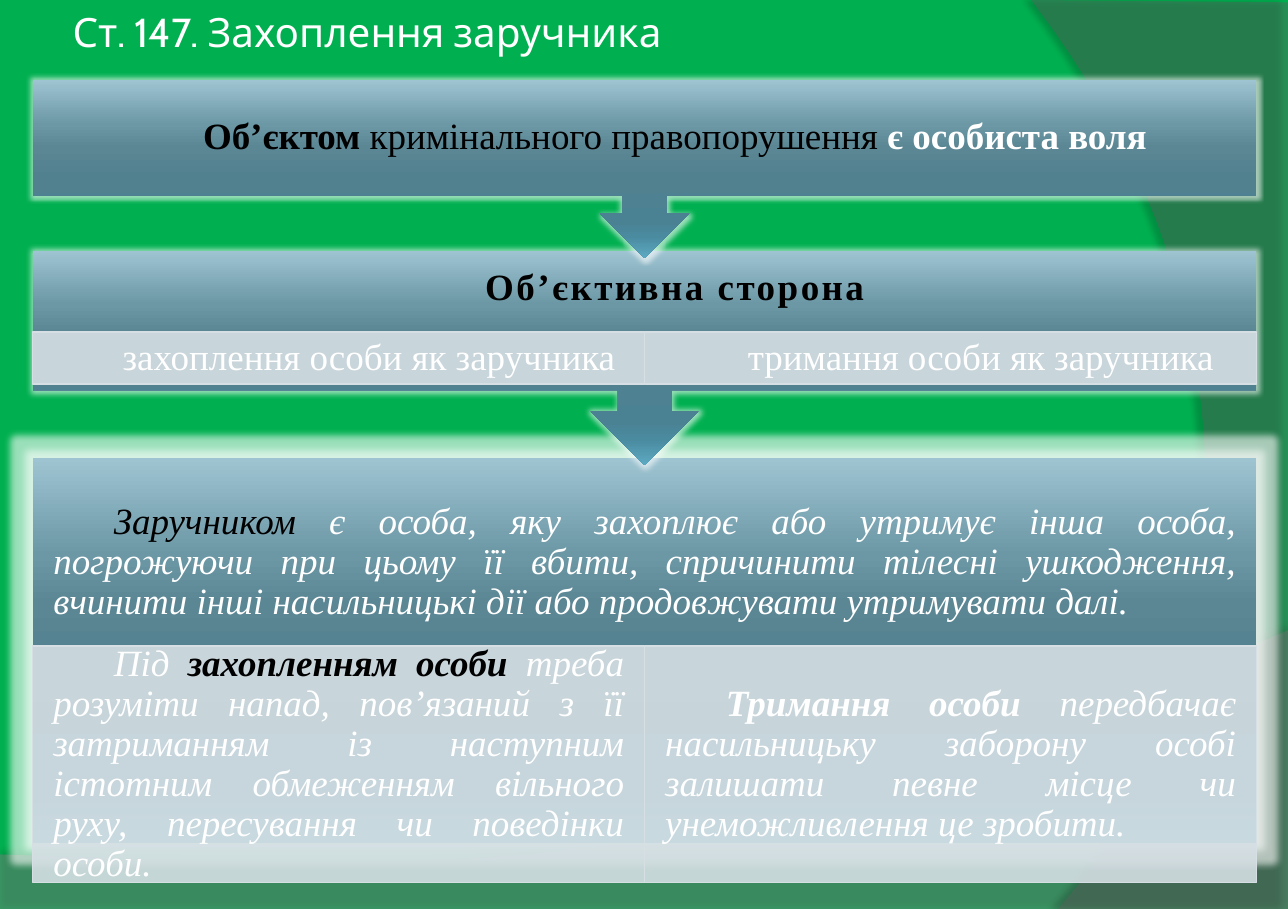
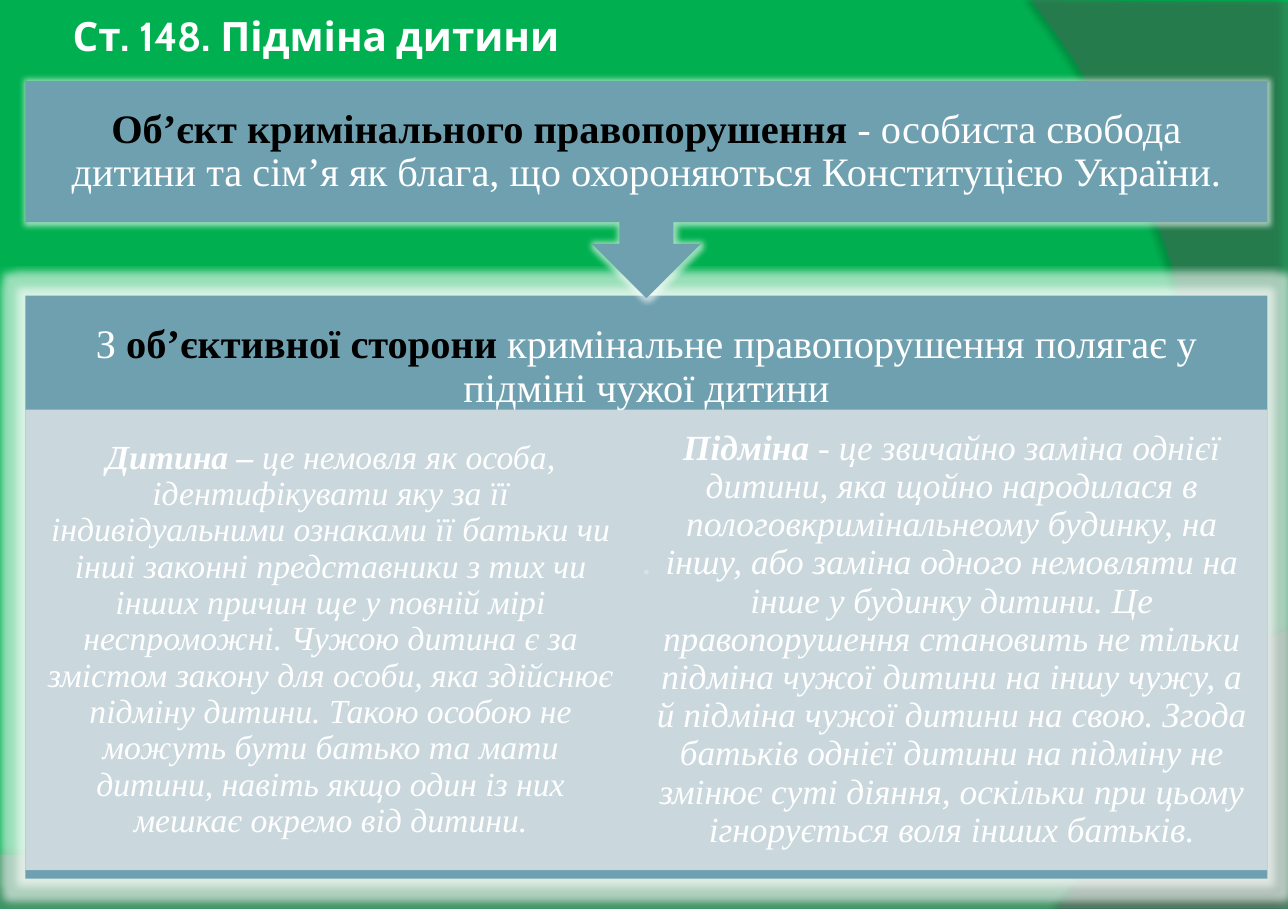
"""Builds two slides on articles 147 and 148: hostage taking and child substitution."""
from dataclasses import dataclass

from lxml import etree
from pptx import Presentation
from pptx.dml.color import RGBColor
from pptx.enum import shapes, text
from pptx.oxml import ns
from pptx.util import Inches, Pt


@dataclass(frozen=True)
class Theme:
    back: str = "00B050"
    white: str = "FFFFFF"
    black: str = "000000"
    cell: str = "D5DFE4"
    steel: str = "6EA0B0"
    hill: str = "7F7F7F"
    side: str = "5E5E5E"
    metal: tuple = ((0, "9EC4D2"), (25, "6C97A5"), (38, "5B8694"), (55, "51808F"),
                    (80, "4A8294"), (88, "4A8BA0"), (100, "5DAAC2"))
    title_font: str = "Cabin"
    body_font: str = "Times New Roman"
    large: int = 24
    body: int = 22
    note: int = 21
    small: int = 20


T = Theme()
ALIGN = text.PP_ALIGN
SHAPE = shapes.MSO_SHAPE


def paint(sp, color, alpha=100, effect=None, line=None, **attrs):
    """Fill a shape with one colour or with gradient stops and add one effect."""
    sp.shadow.inherit = False
    if isinstance(color, str):
        sp.fill.solid()
        sp.fill.fore_color.rgb = RGBColor.from_string(color)
        clr = sp._element.spPr.find(".//" + ns.qn("a:srgbClr"))
        etree.SubElement(clr, ns.qn("a:alpha"), val=str(alpha * 1000))
    else:
        sp.fill.gradient()
        sp.fill.gradient_angle = 270
        stops = sp._element.spPr.find(".//" + ns.qn("a:gsLst"))
        for gs in list(stops):
            stops.remove(gs)
        for pos, value in color:
            gs = etree.SubElement(stops, ns.qn("a:gs"), pos=str(pos * 1000))
            etree.SubElement(gs, ns.qn("a:srgbClr"), val=value)
    if line:
        sp.line.color.rgb = RGBColor.from_string(line)
        sp.line.width = Pt(0.75)
    else:
        sp.line.fill.background()
    if effect:
        name, value, opacity = effect
        effects = sp._element.spPr.find(ns.qn("a:effectLst"))
        node = etree.SubElement(effects, ns.qn(name), {k: str(v) for k, v in attrs.items()})
        clr = etree.SubElement(node, ns.qn("a:srgbClr"), val=value)
        etree.SubElement(clr, ns.qn("a:alpha"), val=str(opacity * 1000))


def write(tf, *paras, size=T.body, font=T.body_font, align=ALIGN.CENTER, italic=False,
          indent=0, line=0.9, after=0, gap=0, spacing=0, insets=(0.05, 0.05, 0.05, 0.05)):
    """Write paragraphs of (text, style) runs, where b is bold and k is black."""
    tf.word_wrap = True
    tf.auto_size = text.MSO_AUTO_SIZE.NONE
    tf.vertical_anchor = text.MSO_ANCHOR.MIDDLE
    tf.margin_left, tf.margin_top, tf.margin_right, tf.margin_bottom = map(Inches, insets)
    for i, runs in enumerate(paras):
        p = tf.add_paragraph() if i else tf.paragraphs[0]
        p.alignment = align
        p.line_spacing = line
        p.space_before = Pt(gap if i else 0)
        p.space_after = Pt(after)
        p._p.get_or_add_pPr().set("indent", str(Inches(indent)))
        for words, style in runs:
            r = p.add_run()
            r.text = words
            r.font.name = font
            r.font.size = Pt(size)
            r.font.bold = "b" in style
            r.font.italic = italic
            r.font.color.rgb = RGBColor.from_string(T.black if "k" in style else T.white)
            if spacing:
                r._r.get_or_add_rPr().set("spc", str(int(spacing * 100)))


CALLOUT, RECT = SHAPE.DOWN_ARROW_CALLOUT, SHAPE.RECTANGLE
PAGES = [
    dict(
        title=("Ст. 147. Захоплення заручника", ""), title_height=0.51,
        left=0.27, split=5.32, right=10.37, fill=T.metal, cell_line=T.cell,
        format=dict(indent=0.5, after=6),
        bands=[
            dict(kind=CALLOUT, top=0.66, height=1.47, glow=0.06, pad=(0.17, 0.17),
                 head=[[("Об’єктом ", "bk"), ("кримінального правопорушення ", "k"),
                        ("є особиста воля", "b")]]),
            dict(kind=CALLOUT, top=2.07, height=1.77, glow=0.06, pad=(0.1, 0.63),
                 head=[[("Об’єктивна сторона", "bk")]], head_format=dict(spacing=1.5),
                 cell_top=2.74, cell_height=0.43,
                 cells=[([("захоплення особи як заручника", "")], {}),
                        ([("тримання особи як заручника", "")], {})]),
            dict(kind=RECT, top=3.78, height=3.18, glow=0.12, pad=(0.17, 1.63),
                 head=[[("Заручником", "k"),
                        (" є особа, яку захоплює або утримує інша особа, погрожуючи при цьому "
                         "її вбити, спричинити тілесні ушкодження, вчинити інші насильницькі "
                         "дії або продовжувати утримувати далі.", "")]],
                 head_format=dict(align=ALIGN.JUSTIFY, italic=True),
                 cell_top=5.33, cell_height=1.95,
                 cell_format=dict(align=ALIGN.JUSTIFY, italic=True),
                 cells=[([("Під ", ""), ("захопленням особи", "bk"),
                          (" треба розуміти напад, пов’язаний з її затриманням із наступним "
                           "істотним обмеженням вільного руху, пересування чи поведінки "
                           "особи.", "")], {}),
                        ([("Тримання особи ", "b"),
                          ("передбачає насильницьку заборону особі залишати певне місце чи "
                           "унеможливлення це зробити.", "")], {})]),
        ]),
    dict(
        title=("Ст. 148. Підміна дитини", "b"), title_height=0.58,
        left=0.21, split=5.25, right=10.46, fill=T.steel, cell_line=None,
        format=dict(after=8),
        bands=[
            dict(kind=CALLOUT, top=0.67, height=1.79, glow=0.06, pad=(0.19, 0.19),
                 head=[[("Об’єкт кримінального правопорушення ", "bk"),
                        ("- особиста свобода дитини та сім’я як блага, що охороняються "
                         "Конституцією України.", "")]],
                 head_format=dict(size=T.large)),
            dict(kind=RECT, top=2.44, height=4.81, glow=0.12, pad=(0.19, 2.4),
                 head=[[("З ", ""), ("об’єктивної сторони ", "bk"),
                        ("кримінальне правопорушення полягає у підміні чужої дитини", "")],
                       [(".", "")]],
                 head_format=dict(size=T.large, gap=68),
                 cell_top=3.38, cell_height=3.8, cell_format=dict(italic=True),
                 cells=[([("Дитина – ", "b"),
                          ("це немовля як особа, ідентифікувати яку за її індивідуальними "
                           "ознаками її батьки чи інші законні представники з тих чи інших "
                           "причин ще у повній мірі неспроможні. Чужою дитина є за змістом "
                           "закону для особи, яка здійснює підміну дитини. Такою особою не "
                           "можуть бути батько та мати дитини, навіть якщо один із них мешкає "
                           "окремо від дитини.", "")], dict(size=T.small)),
                        ([("Підміна", "b"),
                          (" - це звичайно заміна однієї дитини, яка щойно народилася в "
                           "пологовкримінальнеому будинку, на іншу, або заміна одного немовляти "
                           "на інше у будинку дитини. Це правопорушення становить не тільки "
                           "підміна чужої дитини на іншу чужу, а й підміна чужої дитини на свою. "
                           "Згода батьків однієї дитини на підміну не змінює суті діяння, "
                           "оскільки при цьому ігнорується воля інших батьків.", "")],
                         dict(size=T.note))]),
        ]),
]
WAVES = [
    (T.hill, 45, 35, 3.5, 270, [(0, 7.05), (0, 7.51), (10.63, 7.51)],
     [(10.63, 5.2), (5.94, 7.29), (4.15, 7.19), (0, 7.05)]),
    (T.side, 40, 45, 4, 180, [(10.63, 0.02), (10.63, 7.5)],
     [(8.73, 7.5), (9.94, 6.19), (10.82, 3), (8.51, 0)]),
]

prs = Presentation()
prs.slide_width, prs.slide_height = Inches(10.63), Inches(7.5)
layout = prs.slide_layouts[5]
bg = prs.slide_master.background.fill
bg.solid()
bg.fore_color.rgb = RGBColor.from_string(T.back)

for n, page in enumerate(PAGES):
    s = prs.slides.add_slide(layout)
    if n == 0:
        for i, (color, alpha, dark, dist, angle, corners, curve) in enumerate(WAVES):
            points = list(corners)
            for step in range(41):
                t = step / 40
                weights = ((1 - t) ** 3, 3 * t * (1 - t) ** 2, 3 * t * t * (1 - t), t ** 3)
                points.append(tuple(sum(w * c[axis] for w, c in zip(weights, curve))
                                    for axis in (0, 1)))
            fb = s.shapes.build_freeform(*map(Inches, points[0]), scale=1.0)
            fb.add_line_segments([tuple(map(Inches, pt)) for pt in points[1:]], close=True)
            wave = fb.convert_to_shape()
            paint(wave, color, alpha, ("a:outerShdw", T.black, dark), blurRad=Pt(4),
                  dist=Pt(dist), dir=angle * 60000, algn="ctr", rotWithShape=0)
            layout.shapes._spTree.insert(2 + i, wave._element)

    title = s.shapes.title
    title.left, title.top = Inches(0.55), Inches(0)
    title.width, title.height = Inches(8.68), Inches(page["title_height"])
    write(title.text_frame, [page["title"]], size=T.large, font=T.title_font,
          align=ALIGN.LEFT, line=1.0)

    left, split, right = page["left"], page["split"], page["right"]
    for band in reversed(page["bands"]):
        sp = s.shapes.add_shape(band["kind"], Inches(left), Inches(band["top"]),
                                Inches(right - left), Inches(band["height"]))
        paint(sp, page["fill"], effect=("a:glow", T.white, 60), rad=Inches(band["glow"]))
        above, below = band["pad"]
        write(sp.text_frame, *band["head"], insets=(0.17, above, 0.17, below),
              **{**page["format"], **band.get("head_format", {})})
        edges = ((left, split), (split, right))
        for (x, end), (runs, extra) in zip(edges, band.get("cells", [])):
            sp = s.shapes.add_shape(RECT, Inches(x), Inches(band["cell_top"]),
                                    Inches(end - x), Inches(band["cell_height"]))
            paint(sp, T.cell, 90, line=page["cell_line"])
            write(sp.text_frame, runs, insets=(0.17, 0.03, 0.17, 0.03),
                  **{**page["format"], **band.get("cell_format", {}), **extra})

prs.save("out.pptx")
